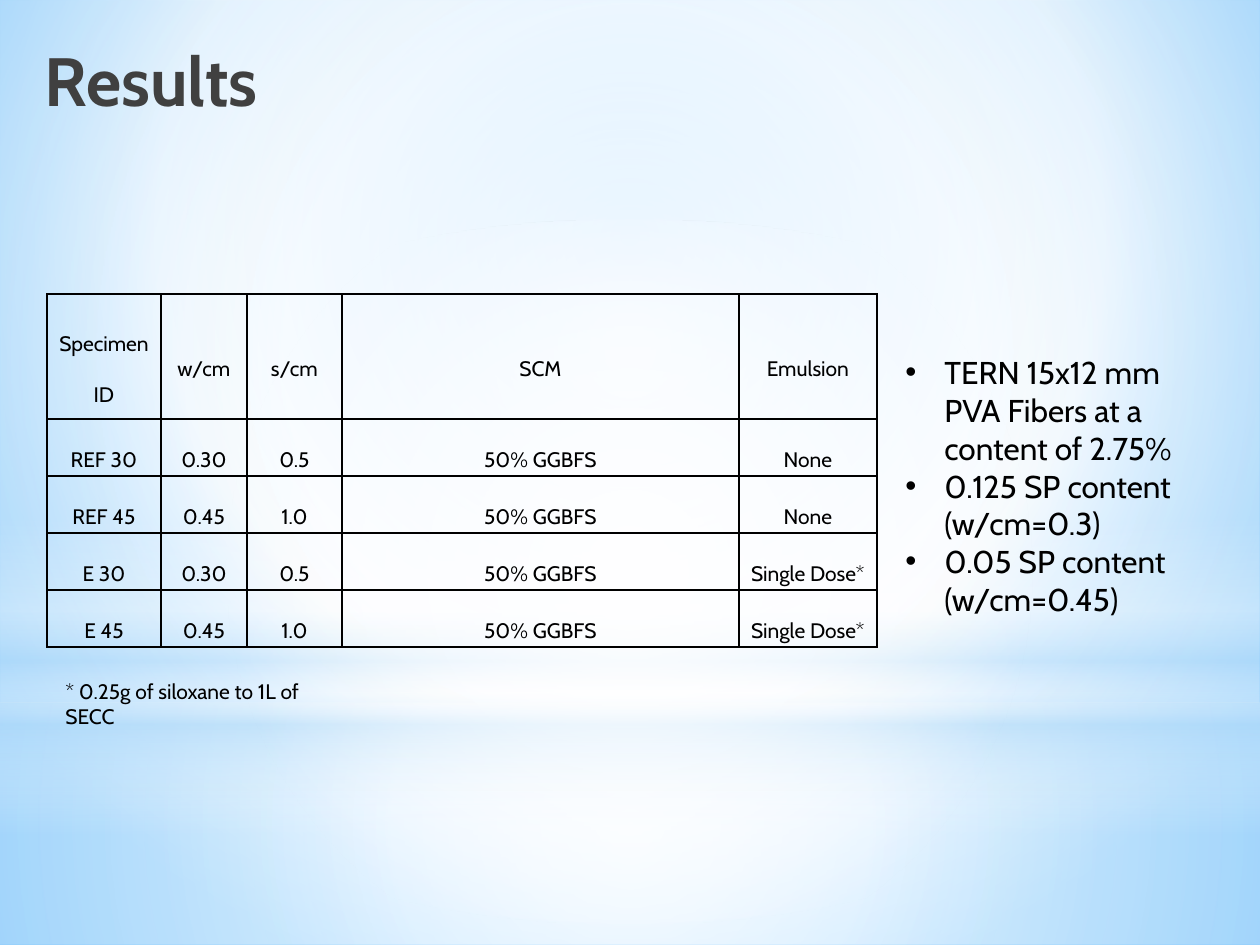
from lxml import etree
from pptx import Presentation
from pptx.dml.color import RGBColor
from pptx.enum.shapes import MSO_SHAPE
from pptx.enum.text import MSO_ANCHOR, MSO_AUTO_SIZE, PP_ALIGN
from pptx.oxml.ns import qn
from pptx.util import Emu, Pt

RECT, OVAL = MSO_SHAPE.RECTANGLE, MSO_SHAPE.OVAL
TOP, MIDDLE = MSO_ANCHOR.TOP, MSO_ANCHOR.MIDDLE
LEFT, CENTER = PP_ALIGN.LEFT, PP_ALIGN.CENTER
NO_FIT = MSO_AUTO_SIZE.NONE

BLACK = RGBColor(0x00, 0x00, 0x00)
GRAY = RGBColor(0x40, 0x40, 0x40)
WHITE = RGBColor(0xFF, 0xFF, 0xFF)
PALE = RGBColor(0xB4, 0xDC, 0xFA)
SKY = RGBColor(0x9E, 0xD5, 0xFF)
BLUE = RGBColor(0x5B, 0xB9, 0xFF)

MID = (50, 50, 50, 50)
SCALE = 914400 / 126


def px(n):
    return Emu(round(n * SCALE))


def add(parent, tag, **attrs):
    """Append a drawing element and return it."""
    node = etree.SubElement(parent, qn(tag))
    for key, value in attrs.items():
        node.set(key, str(value))
    return node


def blend(root, stops, focus=None):
    """Swap the solid fill in root for a gradient of (place, colour, opacity)."""
    solid = next(root.iter(qn("a:solidFill")))
    grad = etree.Element(qn("a:gradFill"), rotWithShape="1")
    group = add(grad, "a:gsLst")
    for place, color, alpha in stops:
        stop = add(group, "a:gs", pos=place * 1000)
        tint = add(stop, "a:srgbClr", val=color)
        if alpha < 100:
            add(tint, "a:alpha", val=alpha * 1000)
    if focus:
        ring = add(grad, "a:path", path="circle")
        sides = {side: n * 1000 for side, n in zip("ltrb", focus)}
        add(ring, "a:fillToRect", **sides)
    else:
        add(grad, "a:lin", ang=5400000, scaled=0)
    solid.getparent().replace(solid, grad)


class Deck:
    font = "Cabin"

    def __init__(self):
        self.prs = Presentation()
        self.prs.slide_width, self.prs.slide_height = px(1260), px(945)
        self.slide = self.prs.slides.add_slide(self.prs.slide_layouts[5])
        self.shapes = self.slide.shapes

    def style(self, para, size, color=BLACK, bold=False):
        for run in para.runs:
            font = run.font
            font.name, font.size, font.bold = self.font, Pt(size), bold
            font.color.rgb = color

    def hang(self, para, depth):
        props = para._p.get_or_add_pPr()
        props.set("marL", str(px(depth)))
        props.set("indent", str(-px(depth)))
        return props

    def back(self, stops, focus):
        ground = self.slide.background
        ground.fill.solid()
        blend(self.slide._element, stops, focus)

    def glow(self, kind, box, stops, focus=None):
        shape = self.shapes.add_shape(kind, *map(px, box))
        shape.shadow.inherit = False
        shape.line.fill.background()
        shape.fill.solid()
        blend(shape._element, stops, focus)

    def title(self, text, box):
        shape = self.shapes.title
        shape.left, shape.top, shape.width, shape.height = map(px, box)
        self.shapes._spTree.append(shape._element)  # in front of the glows
        frame = shape.text_frame
        frame.text = text
        frame.vertical_anchor, frame.auto_size = TOP, NO_FIT
        para = frame.paragraphs[0]
        para.alignment = LEFT
        self.hang(para, 44)
        self.style(para, 39, GRAY, True)

    def text(self, lines, box, size, bullet=False):
        frame = self.shapes.add_textbox(*map(px, box)).text_frame
        frame.word_wrap = True
        frame.text = "\n".join(lines)
        for para in frame.paragraphs:
            if bullet:
                props = self.hang(para, 39)
                add(props, "a:buFont", typeface="Arial")
                add(props, "a:buChar", char="•")
            self.style(para, size)

    def border(self, cell):
        props = cell._tc.get_or_add_tcPr()
        for spot, side in enumerate("LRTB"):
            line = etree.Element(qn("a:ln" + side), w=str(Pt(1)))
            add(add(line, "a:solidFill"), "a:srgbClr", val=BLACK)
            props.insert(spot, line)

    def table(self, rows, left, top, widths, heights):
        box = left, top, sum(widths), sum(heights)
        frame = self.shapes.add_table(len(rows), len(widths), *map(px, box))
        table = frame.table
        table.first_row = table.horz_banding = False
        for col, width in zip(table.columns, widths):
            col.width = px(width)
        for row, height, texts in zip(table.rows, heights, rows):
            row.height = px(height)
            for cell, text in zip(row.cells, texts):
                cell.text = text
                cell.vertical_anchor = MIDDLE
                cell.margin_left = cell.margin_right = px(9)
                cell.margin_top = cell.margin_bottom = 0
                cell.fill.background()
                self.border(cell)
                para = cell.text_frame.paragraphs[0]
                para.alignment, para.line_spacing = CENTER, 2.0
                self.style(para, 12)


def main():
    deck = Deck()

    # Background and soft light
    deck.back([(0, SKY, 100), (60, WHITE, 100), (100, BLUE, 100)],
              (20, 10, 20, 60))
    deck.glow(RECT, (0, 703, 1260, 242),
              [(0, WHITE, 91), (37, WHITE, 76), (100, PALE, 79)], MID)
    deck.glow(RECT, (0, 0, 1260, 703),
              [(0, WHITE, 89), (48, WHITE, 62), (100, PALE, 79)], MID)
    deck.glow(RECT, (0, 519, 1260, 315),
              [(0, WHITE, 0), (29, WHITE, 30), (45, PALE, 40),
               (55, WHITE, 26), (65, PALE, 60), (100, WHITE, 0)])
    deck.glow(OVAL, (0, 220, 1260, 703),
              [(0, WHITE, 100), (56, WHITE, 0)], MID)

    # Title and mix notes
    deck.title("Results", (32, 32, 1040, 158))
    deck.text(["TERN 15x12 mm PVA Fibers at a content of 2.75%",
               "0.125 SP content (w/cm=0.3)",
               "0.05 SP content (w/cm=0.45)"],
              (893, 347, 336, 280), 18, bullet=True)

    # Specimen table and footnote
    scm = "50% GGBFS"
    rows = [("Specimen ID", "w/cm", "s/cm", "SCM", "Emulsion"),
            ("REF 30", "0.30", "0.5", scm, "None"),
            ("REF 45", "0.45", "1.0", scm, "None"),
            ("E 30", "0.30", "0.5", scm, "Single Dose*"),
            ("E 45", "0.45", "1.0", scm, "Single Dose*")]
    deck.table(rows, 47, 294, [114, 86, 95, 397, 138], [125] + [57] * 4)
    deck.text(["* 0.25g of siloxane to 1L of SECC"], (53, 672, 302, 38), 12)

    deck.prs.save("out.pptx")


if __name__ == "__main__":
    main()
